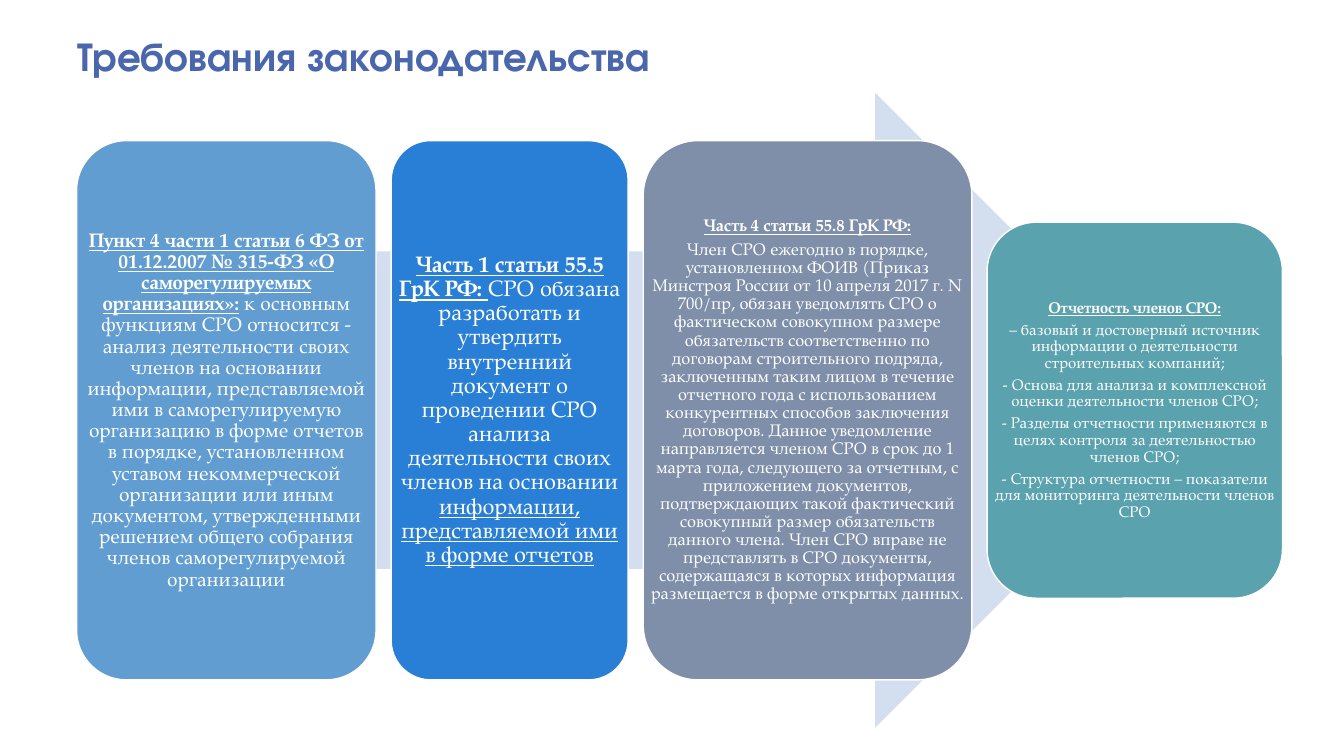
from dataclasses import dataclass

from pptx import Presentation
from pptx.dml.color import RGBColor
from pptx.enum.shapes import MSO_SHAPE as Shape
from pptx.enum.text import MSO_ANCHOR as Anchor, PP_ALIGN as Align
from pptx.util import Inches, Pt


@dataclass(frozen=True)
class Theme:
    title_font: str = "TeX Gyre Adventor"
    body_font: str = "TeX Gyre Pagella"
    title_size: int = 29
    law_size: int = 14
    code_size: int = 16
    notice_size: int = 12
    report_size: int = 11
    title: str = "4A66AC"
    arrow: str = "D3DFEE"
    law: str = "629DD1"
    code: str = "297FD5"
    notice: str = "7F8FA9"
    report: str = "5AA2AE"
    white: str = "FFFFFF"


THEME = Theme()
CARD_LEFT, CARD_GAP, CENTER_Y = 0.76, 0.15, 4.07
TALL, SHORT = 5.35, 3.73
HEADING = {"bold": True, "underline": True}
UNDERLINED = {"underline": True}
PLAIN = {}

# width, height, fill, type size, text inset, paragraphs made of (text, format) runs
CARDS = [
    (2.97, TALL, THEME.law, THEME.law_size, 0.06, [
        [("Пункт 4 части 1 статьи 6 ФЗ от 01.12.2007 № 315-ФЗ "
          "«О саморегулируемых организациях»:", HEADING),
         (" к основным функциям СРО относится - анализ деятельности своих членов "
          "на основании информации, представляемой ими в саморегулируемую "
          "организацию в форме отчетов в порядке, установленном уставом "
          "некоммерческой организации или иным документом, утвержденными решением "
          "общего собрания членов саморегулируемой организации", PLAIN)],
    ]),
    (2.35, TALL, THEME.code, THEME.code_size, 0.07, [
        [("Часть 1 статьи 55.5 ГрК РФ: ", HEADING),
         ("СРО обязана разработать и утвердить внутренний документ о проведении "
          "СРО анализа деятельности своих членов на основании ", PLAIN),
         ("информации, представляемой ими в форме отчетов", UNDERLINED)],
    ]),
    (3.26, TALL, THEME.notice, THEME.notice_size, 0.05, [
        [("Часть 4 статьи 55.8 ГрК РФ:", HEADING)],
        [("Член СРО ежегодно в порядке, установленном ФОИВ (Приказ Минстроя России "
          "от 10 апреля 2017 г. N 700/пр, обязан уведомлять СРО о фактическом "
          "совокупном размере обязательств соответственно по договорам "
          "строительного подряда, заключенным таким лицом в течение отчетного года "
          "с использованием конкурентных способов заключения договоров. Данное "
          "уведомление направляется членом СРО в срок до 1 марта года, следующего "
          "за отчетным, с приложением документов, подтверждающих такой фактический "
          "совокупный размер обязательств данного члена. Член СРО вправе не "
          "представлять в СРО документы, содержащаяся в которых информация "
          "размещается в форме открытых данных.", PLAIN)],
    ]),
    (2.93, SHORT, THEME.report, THEME.report_size, 0.05, [
        [("Отчетность членов СРО:", HEADING)],
        [("– базовый и достоверный источник информации о деятельности "
          "строительных компаний;", PLAIN)],
        [("- Основа для анализа и комплексной оценки деятельности членов СРО;", PLAIN)],
        [("- Разделы отчетности применяются в целях контроля за деятельностью "
          "членов СРО;", PLAIN)],
        [("- Структура отчетности – показатели для мониторинга деятельности "
          "членов СРО", PLAIN)],
    ]),
]


def add_run(paragraph, text, *, font, size, color, bold=False, underline=False):
    run = paragraph.add_run()
    run.text = text
    run.font.name = font
    run.font.size = Pt(size)
    run.font.color.rgb = RGBColor.from_string(color)
    run.font.bold = bold
    run.font.underline = underline


class SlideBuilder:
    def __init__(self, slide, theme):
        self.slide = slide
        self.theme = theme

    def shape(self, kind, left, top, width, height, fill, line=None):
        shape = self.slide.shapes.add_shape(
            kind, Inches(left), Inches(top), Inches(width), Inches(height))
        shape.shadow.inherit = False
        shape.fill.solid()
        shape.fill.fore_color.rgb = RGBColor.from_string(fill)
        if line:
            shape.line.color.rgb = RGBColor.from_string(line)
            shape.line.width = Pt(1)
        else:
            shape.line.fill.background()

    def text_frame(self, left, top, width, height, anchor):
        box = self.slide.shapes.add_textbox(
            Inches(left), Inches(top), Inches(width), Inches(height))
        frame = box.text_frame
        frame.word_wrap = True
        frame.vertical_anchor = anchor
        return frame

    def title(self, text):
        paragraph = self.text_frame(0.67, 0.25, 12, 0.59, Anchor.BOTTOM).paragraphs[0]
        paragraph.line_spacing = 0.8
        add_run(paragraph, text, font=self.theme.title_font,
                size=self.theme.title_size, color=self.theme.title, bold=True)

    def card(self, left, width, height, fill, size, inset, paragraphs):
        """Draw a rounded card with text that uses its full width."""
        area = (left, CENTER_Y - height / 2, width, height)
        self.shape(Shape.ROUNDED_RECTANGLE, *area, fill, self.theme.white)
        frame = self.text_frame(*area, Anchor.MIDDLE)
        frame.margin_left = frame.margin_right = Inches(inset)
        frame.margin_top = frame.margin_bottom = Inches(inset)
        for index, runs in enumerate(paragraphs):
            paragraph = frame.add_paragraph() if index else frame.paragraphs[0]
            paragraph.alignment = Align.CENTER
            paragraph.line_spacing = 0.9
            paragraph.space_after = Pt(0.35 * size)
            for text, style in runs:
                add_run(paragraph, text, font=self.theme.body_font, size=size,
                        color=self.theme.white, **style)


def main():
    presentation = Presentation()
    presentation.slide_width = Inches(13.33)
    presentation.slide_height = Inches(7.5)
    slide = presentation.slides.add_slide(presentation.slide_layouts[6])
    builder = SlideBuilder(slide, THEME)

    builder.title("Требования законодательства")
    builder.shape(Shape.RIGHT_ARROW, 1.66, 0.92, 10.17, 6.3, THEME.arrow)
    left = CARD_LEFT
    for width, *details in CARDS:
        builder.card(left, width, *details)
        left += width + CARD_GAP

    presentation.save("out.pptx")


if __name__ == "__main__":
    main()
